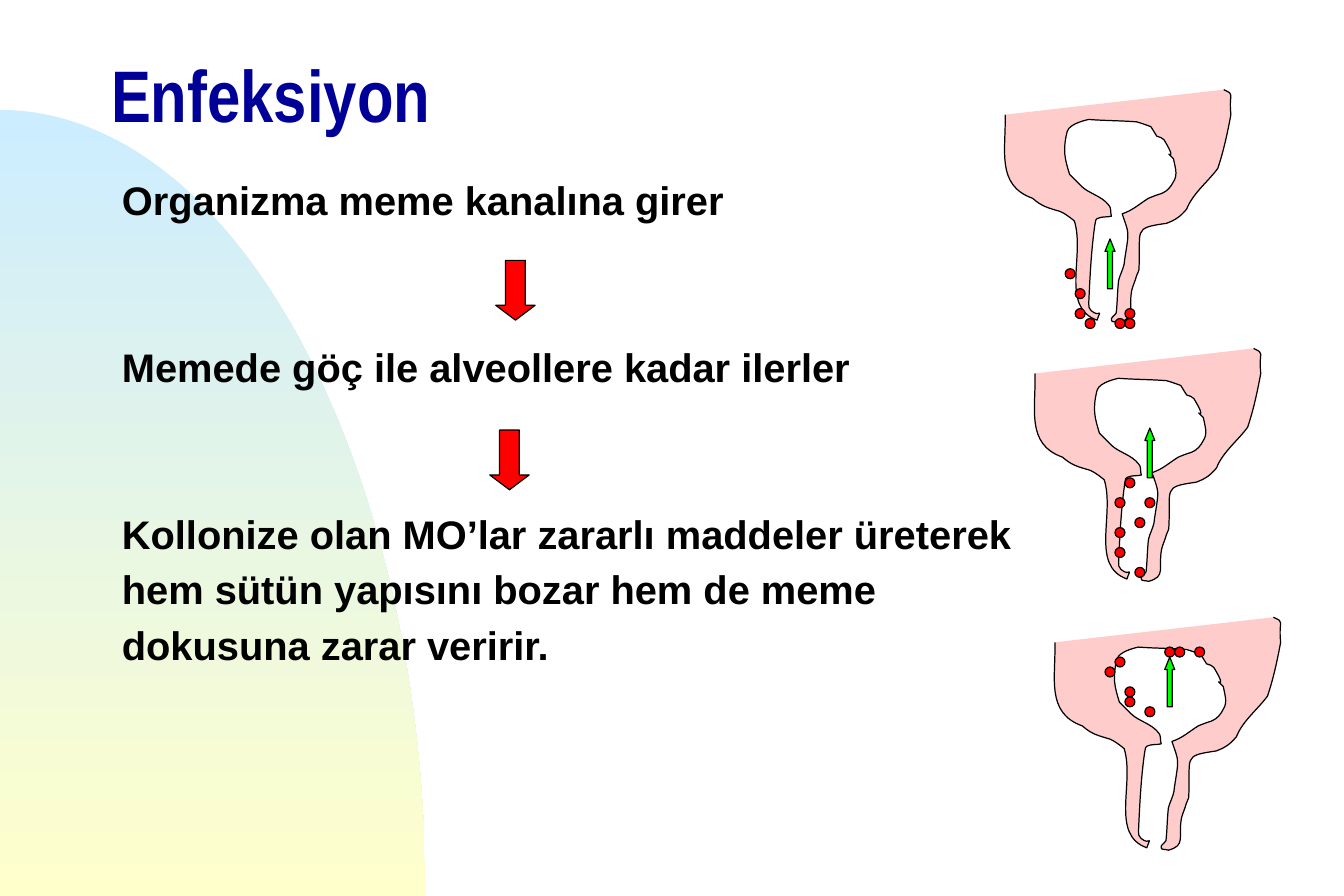
from lxml.etree import SubElement
from pptx import Presentation
from pptx.dml.color import RGBColor
from pptx.enum.shapes import MSO_SHAPE as Shape
from pptx.enum.text import MSO_ANCHOR as Anchor, MSO_AUTO_SIZE as AutoSize, PP_ALIGN as Align
from pptx.oxml.ns import qn
from pptx.util import Inches, Pt

NAVY = RGBColor(0x00, 0x00, 0x99)
BLACK = RGBColor(0x00, 0x00, 0x00)
RED = RGBColor(0xFF, 0x00, 0x00)
GREEN = RGBColor(0x00, 0xFF, 0x00)
PINK = RGBColor(0xFF, 0xCC, 0xCC)
SKY = RGBColor(0xCC, 0xEC, 0xFF)
CREAM = RGBColor(0xFF, 0xFF, 0xCC)

GRID = 1 / 12
STEPS = [
    ("Organizma meme kanalına girer", 3),
    ("Memede göç ile alveollere kadar ilerler", 71.8),
    ("Kollonize olan MO’lar zararlı maddeler üreterek", 71.8),
    ("hem sütün yapısını bozar hem de meme", 4.6),
    ("dokusuna zarar veririr.", 4.6),
]
UDDER_START = (8, 21)
UDDER_CURVES = [
    (9, 50, 0, 80, 31, 91), (39, 98, 44, 99, 54, 102), (59, 104, 66, 110, 66, 110),
    (75, 139, 54, 182, 85, 193), (89, 181, 88, 192, 80, 185), (78, 184, 78, 181, 78, 179),
    (79, 157, 80, 136, 83, 114), (84, 112, 83, 109, 85, 108), (89, 106, 93, 107, 97, 106),
    (96, 103, 97, 99, 95, 97), (89, 89, 78, 87, 72, 81), (69, 78, 62, 71, 62, 71),
    (58, 58, 56, 51, 60, 35), (62, 28, 78, 25, 78, 25), (91, 26, 105, 26, 118, 27),
    (122, 28, 130, 31, 130, 31), (132, 34, 133, 36, 135, 39), (137, 40, 140, 40, 141, 42),
    (155, 65, 138, 47, 149, 58), (150, 64, 153, 71, 149, 77), (147, 81, 144, 85, 139, 87),
    (135, 88, 128, 91, 128, 91), (120, 96, 115, 101, 106, 104), (112, 122, 112, 117, 108, 143),
    (108, 147, 106, 151, 105, 154), (104, 156, 103, 160, 103, 160), (102, 169, 102, 178, 101, 187),
    (100, 189, 96, 191, 97, 193), (97, 195, 101, 194, 103, 195), (118, 191, 111, 184, 114, 168),
    (115, 164, 117, 160, 118, 156), (119, 154, 120, 151, 120, 151), (122, 117, 114, 116, 143, 112),
    (151, 109, 155, 106, 160, 100), (165, 87, 178, 77, 186, 66), (191, 51, 194, 37, 197, 21),
    (195, 1, 201, 5, 191, 0),
]
STAGES = [
    ((100, 9), (11, 15), [(9, 23), (12, 23), (7, 18), (13, 22), (8, 22), (8, 20), (13, 23)]),
    ((103, 35), (12, 8), [(9, 20), (11, 22), (9, 18), (9, 15), (11, 17), (12, 15), (10, 13)]),
    ((105, 62), (12, 4), [(12, 3), (8, 8), (15, 3), (13, 3), (6, 5), (7, 4), (8, 7), (10, 9)]),
]


def add_outline(slide, left, top, start, curves, corners=()):
    """Add a freeform of cubic curves in hundredths of an inch, closed through any corners."""
    points = [curve[i:i + 2] for curve in curves for i in (0, 2, 4)]
    builder = slide.shapes.build_freeform(*start, scale=Inches(0.01))
    builder.add_line_segments(points + list(corners), close=bool(corners))
    outline = builder.convert_to_shape(Inches(left), Inches(top))
    segments = list(outline._element.iter(qn("a:lnTo")))[:len(points)]
    for curve, second, end in zip(segments[::3], segments[1::3], segments[2::3]):
        curve.tag = qn("a:cubicBezTo")
        for segment in (second, end):
            curve.append(segment[0])
            segment.getparent().remove(segment)
    outline.shadow.inherit = False
    return outline


def paint(figure, color):
    """Give a figure a solid fill and a thin black line."""
    figure.shadow.inherit = False
    figure.fill.solid()
    figure.fill.fore_color.rgb = color
    figure.line.color.rgb = BLACK
    figure.line.width = Pt(0.75)


def add_figure(slide, kind, left, top, width, height, color, adjustments=()):
    """Add a painted preset shape in the given box."""
    figure = slide.shapes.add_shape(kind, Inches(left), Inches(top), Inches(width), Inches(height))
    for i, value in enumerate(adjustments):
        figure.adjustments[i] = value
    paint(figure, color)


def add_backdrop(slide, left, top, width, height):
    """Draw the gradient quarter ellipse behind everything else."""
    w, h = round(width * 100), round(height * 100)
    arc = (round(w * 0.55), 0, w, round(h * 0.45), w, h)
    backdrop = add_outline(slide, left, top, (0, 0), [arc], [(0, h)])
    backdrop.line.fill.background()
    backdrop.fill.gradient()
    backdrop.fill.gradient_angle = 270
    for stop, color in zip(backdrop.fill.gradient_stops, (SKY, CREAM)):
        stop.color.rgb = color
    slide.shapes._spTree.insert(2, backdrop._element)


def place(placeholder, left, top, width, height, anchor):
    """Move a placeholder and return its text frame, ready for text."""
    placeholder.left, placeholder.top = Inches(left), Inches(top)
    placeholder.width, placeholder.height = Inches(width), Inches(height)
    frame = placeholder.text_frame
    frame.auto_size = AutoSize.NONE
    frame.word_wrap = True
    frame.vertical_anchor = anchor
    return frame


def style(paragraph, font, size, color):
    """Set the left-aligned bold type of a paragraph."""
    paragraph.alignment = Align.LEFT
    paragraph.font.name = font
    paragraph.font.size = Pt(size)
    paragraph.font.bold = True
    paragraph.font.color.rgb = color


def add_title(slide, left, top, width, height):
    """Fill the title placeholder."""
    heading = place(slide.shapes.title, left, top, width, height, Anchor.MIDDLE).paragraphs[0]
    heading.text = "Enfeksiyon"
    heading.line_spacing = 0.7
    style(heading, "Arial Narrow", 44, NAVY)


def add_steps(slide, left, top, width, height):
    """Fill the body with the infection steps and put red arrows between them."""
    frame = place(slide.placeholders[1], left, top, width, height, Anchor.TOP)
    frame.text = "\n".join(text for text, _ in STEPS)
    for step, (_, gap) in zip(frame.paragraphs, STEPS):
        step.space_before = Pt(gap)
        style(step, "Arial", 24, BLACK)
        properties = step._p.get_or_add_pPr()
        properties.set("marL", str(Inches(0.38)))
        properties.set("indent", str(-Inches(0.38)))
        properties.insert_element_before(SubElement(properties, qn("a:buNone")), "a:tabLst", "a:defRPr")
    for dx, dy in ((3.23, 0.76), (3.18, 2.18)):
        add_figure(slide, Shape.DOWN_ARROW, left + dx, top + dy, 0.33, 0.5, RED, (0.5, 0.375))


def add_stage(slide, corner, arrow, germs):
    """Draw an udder with its germs and green arrow on a grid of twelfths."""
    left, top = (n * GRID for n in corner)
    paint(add_outline(slide, left, top, UDDER_START, UDDER_CURVES), PINK)
    for x, y in germs:
        add_figure(slide, Shape.OVAL, left + x * GRID, top + y * GRID, GRID, GRID, RED)
    x, y = arrow
    add_figure(slide, Shape.UP_ARROW, left + x * GRID, top + y * GRID, GRID, 5 * GRID, GREEN, (0.5, 1.25))


def main():
    """Build the slide and save it."""
    deck = Presentation()
    deck.slide_width, deck.slide_height = Inches(11.25), Inches(7.5)
    slide = deck.slides.add_slide(deck.slide_layouts[1])
    add_backdrop(slide, 0, 0.92, 3.56, 6.58)
    add_title(slide, 0.83, 0.25, 7.5, 1.25)
    add_steps(slide, 0.92, 1.42, 9.25, 4.5)
    for stage in STAGES:
        add_stage(slide, *stage)
    deck.save("out.pptx")


if __name__ == "__main__":
    main()
